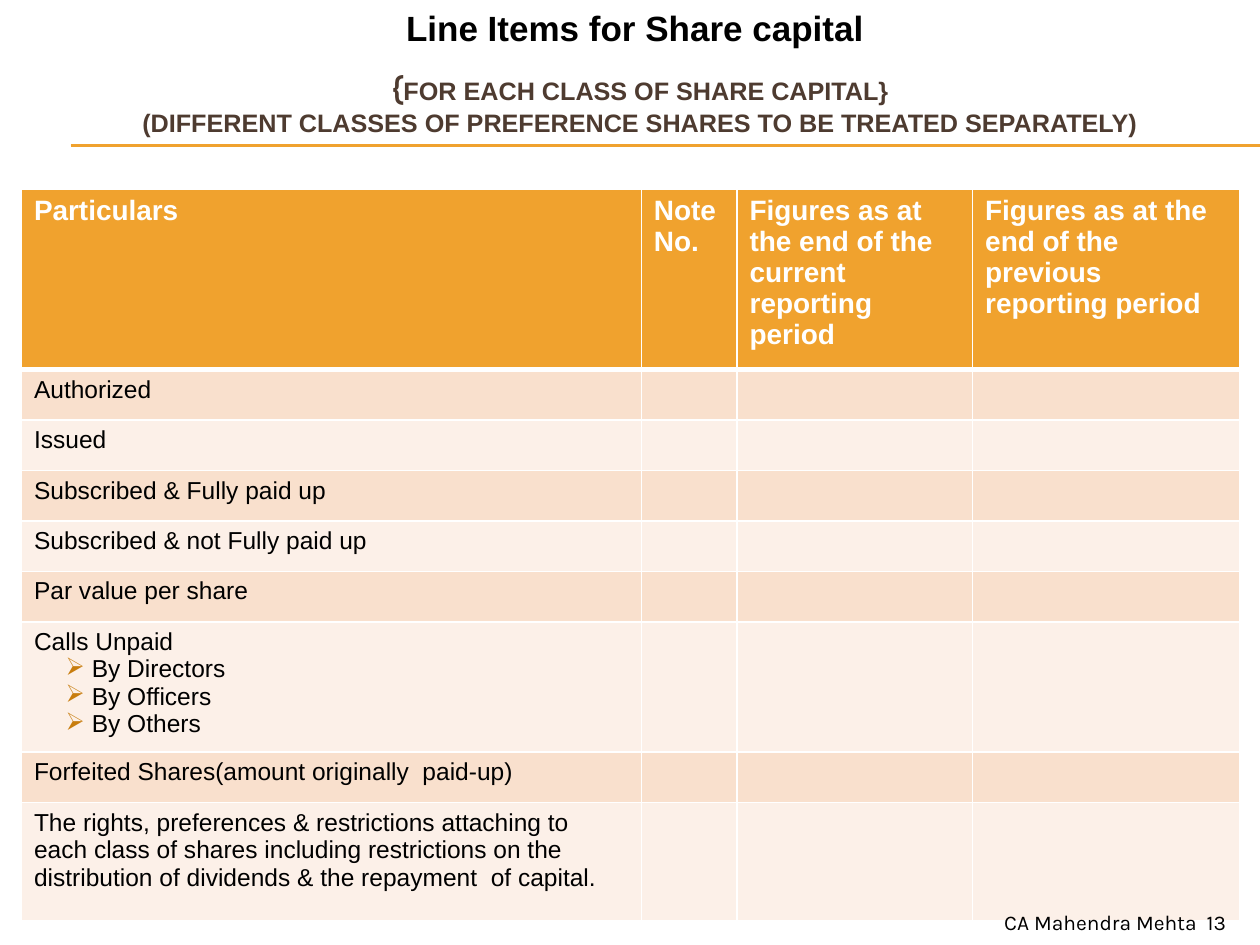
from pptx import Presentation
from pptx.dml.color import RGBColor as RGB
from pptx.enum.shapes import MSO_CONNECTOR as Conn
from pptx.enum.text import PP_ALIGN as Al
from pptx.util import Inches, Pt
from lxml import etree
from pptx.oxml.ns import qn

GOLD = RGB(0xF0, 0xA2, 0x2E)
PEACH = RGB(0xF9, 0xE0, 0xCD)
CREAM = RGB(0xFC, 0xF0, 0xE8)
BROWN = RGB(0x4E, 0x3B, 0x30)
RUST = RGB(0xC8, 0x7D, 0x0E)
WHITE = RGB(255, 255, 255)
BLACK = RGB(0, 0, 0)


def write(para, text, color, **form):
    run = para.add_run()
    run.text = text
    for key, val in form.items():
        setattr(run.font, key, val)
    run.font.color.rgb = color


def add_box(left, top, width, height):
    box = slide.shapes.add_textbox(*map(Inches, (left, top, width, height)))
    box.text_frame.word_wrap = True
    return box.text_frame


prs = Presentation()
prs.slide_width, prs.slide_height = Inches(10), Inches(7.5)
slide = prs.slides.add_slide(prs.slide_layouts[6])

# Double rule under the heading
for y in (1.15, 1.16):
    rule = slide.shapes.add_connector(
        Conn.STRAIGHT, Inches(0.56), Inches(y), Inches(10), Inches(y))
    rule.line.color.rgb = GOLD
    rule.line.width = Pt(0.75)
    etree.SubElement(rule._element.spPr, qn("a:effectLst"))

# Heading and subheading
frame = add_box(2.83, 0, 4.42, 0.44)
frame.paragraphs[0].alignment = Al.CENTER
write(frame.paragraphs[0], "Line Items for Share capital", BLACK,
      name="Arial", size=Pt(20), bold=True)

frame = add_box(0.33, 0.55, 9.5, 0.67)
frame.margin_top = 0
first, second = frame.paragraphs[0], frame.add_paragraph()
sub = dict(name="Arial", size=Pt(14.4), bold=True)
write(first, "{", BROWN, name="Karla", size=Pt(18), bold=True)
write(first, "FOR EACH CLASS OF SHARE CAPITAL}", BROWN, **sub)
write(second, "(DIFFERENT CLASSES OF PREFERENCE SHARES TO BE TREATED SEPARATELY)",
      BROWN, **sub)
for para in (first, second):
    para.alignment = Al.CENTER

# Table: first column texts, further lines of an item are bulleted
heads = ["Particulars", "Note No.",
         "Figures as at the end of the current reporting period",
         "Figures as at the end of the previous reporting period"]
items = [
    ["Authorized"],
    ["Issued"],
    ["Subscribed & Fully paid up"],
    ["Subscribed & not Fully paid up"],
    ["Par value per share"],
    ["Calls Unpaid", " By Directors", " By Officers", " By Others"],
    ["Forfeited Shares(amount originally  paid-up)"],
    ["The rights, preferences & restrictions attaching to each class of shares "
     "including restrictions on the distribution of dividends & the repayment  "
     "of capital."],
]
cols = [4.92, 0.76, 1.87, 2.12]
rows = [1.39] + [0.39] * 5 + [0.98, 0.39, 0.94]
table = slide.shapes.add_table(
    len(rows), len(cols), Inches(0.17), Inches(1.5),
    Inches(sum(cols)), Inches(sum(rows))).table
for col, width in zip(table.columns, cols):
    col.width = Inches(width)
for row, height in zip(table.rows, rows):
    row.height = Inches(height)

# Cell fills and white borders
for r in range(len(rows)):
    for c in range(len(cols)):
        cell = table.cell(r, c)
        cell.fill.solid()
        cell.fill.fore_color.rgb = GOLD if r == 0 else PEACH if r % 2 else CREAM
        props = cell._tc.get_or_add_tcPr()
        for i, side in enumerate("LRTB"):
            thick = (r, side) in ((0, "B"), (1, "T"))
            line = etree.Element(qn("a:ln" + side), w=str(Pt(3 if thick else 1)))
            fill = etree.SubElement(line, qn("a:solidFill"))
            etree.SubElement(fill, qn("a:srgbClr"), val=str(WHITE))
            props.insert(i, line)

# Cell texts
for c, head in enumerate(heads):
    write(table.cell(0, c).text_frame.paragraphs[0], head, WHITE,
          name="Arial", size=Pt(16), bold=True)
for r, lines in enumerate(items, 1):
    frame = table.cell(r, 0).text_frame
    for i, text in enumerate(lines):
        para = frame.add_paragraph() if i else frame.paragraphs[0]
        write(para, text, BLACK, name="Arial", size=Pt(14), bold=False)
        if i:
            props = para._p.get_or_add_pPr()
            props.set("marL", str(Inches(0.25)))
            props.set("indent", "0")
            tint = etree.SubElement(props, qn("a:buClr"))
            etree.SubElement(tint, qn("a:srgbClr"), val=str(RUST))
            etree.SubElement(props, qn("a:buChar"), char="➢")

# Footer
frame = add_box(7.58, 7.17, 2.25, 0.33)
frame.paragraphs[0].alignment = Al.RIGHT
write(frame.paragraphs[0], "CA Mahendra Mehta  13", BLACK,
      name="Karla", size=Pt(12))

prs.save("out.pptx")
